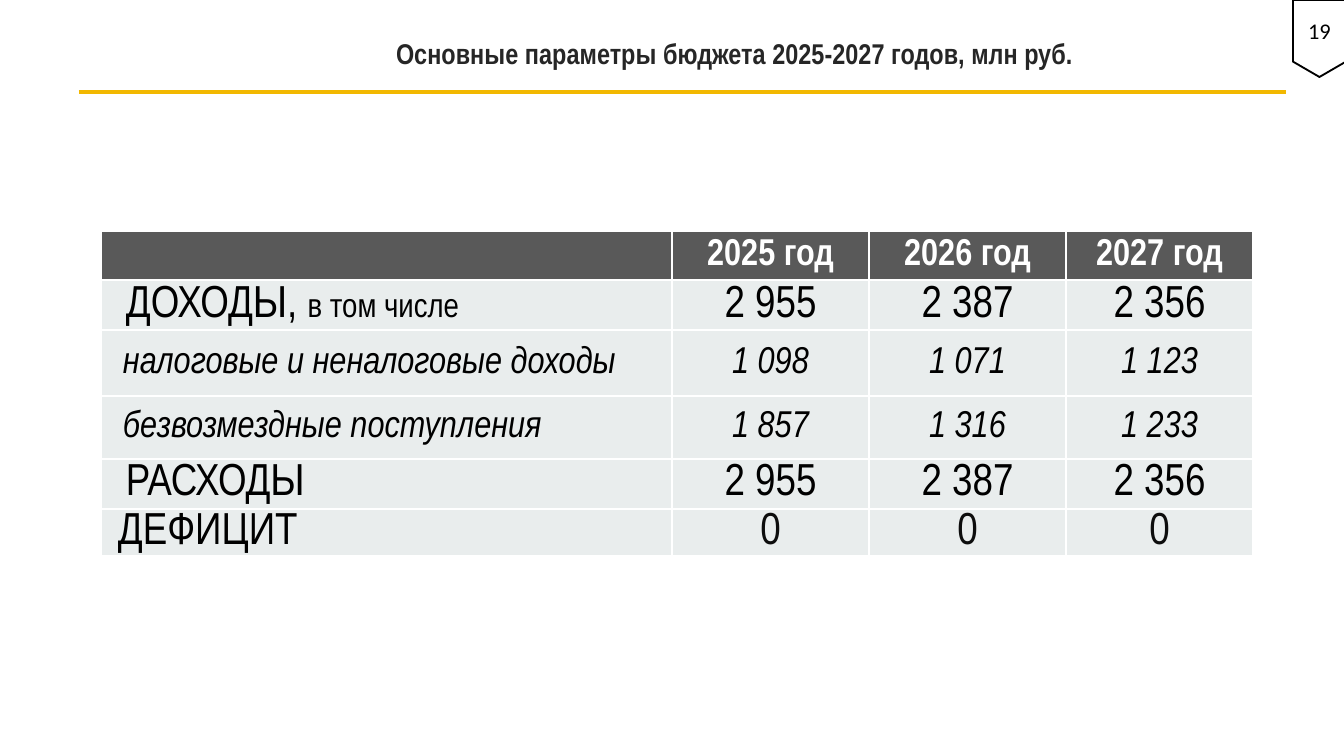
from lxml.etree import SubElement
from pptx import Presentation
from pptx.dml.color import RGBColor
from pptx.enum.shapes import MSO_CONNECTOR, MSO_SHAPE
from pptx.enum.text import MSO_ANCHOR, PP_ALIGN
from pptx.oxml.ns import qn
from pptx.util import Pt

EMU_PER_PX = 914400 / 134.4
WHITE = RGBColor(0xFF, 0xFF, 0xFF)
BLACK = RGBColor(0x00, 0x00, 0x00)
ZERO_TEXT = RGBColor(0x0D, 0x0D, 0x0D)
TITLE_TEXT = RGBColor(0x26, 0x26, 0x26)
GOLD = RGBColor(0xF2, 0xB8, 0x00)
HEADER_FILL = RGBColor(0x59, 0x59, 0x59)
BODY_FILL = RGBColor(0xE9, 0xED, 0xED)

COLUMN_WIDTHS = [571, 197, 197, 187]
HEADER_HEIGHT = 49
YEARS = ["2025 год", "2026 год", "2027 год"]
MAIN = {"size": 24}
DETAIL = {"size": 20, "italic": True}
# Row height, label indent, label runs, values, value format
BUDGET_ROWS = [
    (50, 25, [("ДОХОДЫ, ", MAIN), ("в том числе", {"size": 18})],
     ["2 955", "2 387", "2 356"], MAIN),
    (66, 22, [("налоговые и неналоговые доходы", DETAIL)],
     ["1 098", "1 071", "1 123"], DETAIL),
    (63, 22, [("безвозмездные поступления", DETAIL)],
     ["1 857", "1 316", "1 233"], DETAIL),
    (50, 25, [("РАСХОДЫ", MAIN)], ["2 955", "2 387", "2 356"], MAIN),
    (47, 17, [("ДЕФИЦИТ", MAIN)], ["0", "0", "0"], {"size": 24, "color": ZERO_TEXT}),
]


def px(length):
    return round(length * EMU_PER_PX)


def add_text(paragraph, text, size=20, font="Arial Narrow", color=BLACK,
             bold=False, italic=False, align=PP_ALIGN.LEFT):
    paragraph.alignment = align
    run = paragraph.add_run()
    run.text = text
    run.font.name = font
    run.font.size = Pt(size)
    run.font.color.rgb = color
    run.font.bold = bold
    run.font.italic = italic


def add_title(slide, left, top, width, height):
    title = slide.shapes.title
    title.left, title.top, title.width, title.height = map(px, (left, top, width, height))
    frame = title.text_frame
    frame.word_wrap = True
    frame.vertical_anchor = MSO_ANCHOR.MIDDLE
    frame.margin_left = frame.margin_right = px(10)
    frame.margin_top = frame.margin_bottom = px(5)
    paragraph = frame.paragraphs[0]
    paragraph.line_spacing = 0.9
    add_text(paragraph, "Основные параметры бюджета 2025-2027 годов, млн руб.",
             size=15.3, color=TITLE_TEXT, bold=True)


def add_rule(slide, left, top, width):
    rule = slide.shapes.add_connector(
        MSO_CONNECTOR.STRAIGHT, px(left), px(top), px(left + width), px(top))
    rule.line.color.rgb = GOLD
    rule.line.width = Pt(2.25)
    SubElement(rule._element.spPr, qn("a:effectLst"))


def format_cell(cell, fill, left_margin=1, top_margin=1):
    properties = cell._tc.get_or_add_tcPr()
    for side in ("lnL", "lnR", "lnT", "lnB"):
        border = SubElement(properties, qn(f"a:{side}"), w=str(Pt(1)))
        border_fill = SubElement(border, qn("a:solidFill"))
        SubElement(border_fill, qn("a:srgbClr"), val=str(WHITE))
    cell.fill.solid()
    cell.fill.fore_color.rgb = fill
    cell.vertical_anchor = MSO_ANCHOR.MIDDLE
    cell.margin_left, cell.margin_right = px(left_margin), px(1)
    cell.margin_top, cell.margin_bottom = px(top_margin), 0


def add_budget_table(slide, left, top):
    heights = [HEADER_HEIGHT] + [row[0] for row in BUDGET_ROWS]
    table = slide.shapes.add_table(
        len(heights), len(COLUMN_WIDTHS), px(left), px(top),
        px(sum(COLUMN_WIDTHS)), px(sum(heights))).table
    for column, width in zip(table.columns, COLUMN_WIDTHS):
        column.width = px(width)
    for row, height in zip(table.rows, heights):
        row.height = px(height)

    # Header row
    format_cell(table.cell(0, 0), HEADER_FILL)
    for column, year in enumerate(YEARS, 1):
        cell = table.cell(0, column)
        format_cell(cell, HEADER_FILL)
        add_text(cell.text_frame.paragraphs[0], year, color=WHITE, bold=True,
                 align=PP_ALIGN.CENTER)

    # Budget rows
    for row, (_, indent, label, values, style) in enumerate(BUDGET_ROWS, 1):
        cell = table.cell(row, 0)
        format_cell(cell, BODY_FILL, left_margin=indent)
        for text, label_style in label:
            add_text(cell.text_frame.paragraphs[0], text, **label_style)
        for column, value in enumerate(values, 1):
            cell = table.cell(row, column)
            format_cell(cell, BODY_FILL)
            add_text(cell.text_frame.paragraphs[0], value, align=PP_ALIGN.CENTER, **style)


def add_page_marker(slide, left, top, width, height):
    marker = slide.shapes.add_shape(
        MSO_SHAPE.FLOWCHART_OFFPAGE_CONNECTOR, px(left), px(top), px(width), px(height))
    marker.shadow.inherit = False
    marker.fill.solid()
    marker.fill.fore_color.rgb = WHITE
    marker.line.color.rgb = BLACK
    marker.line.width = Pt(1)
    frame = marker.text_frame
    frame.vertical_anchor = MSO_ANCHOR.MIDDLE
    frame.word_wrap = True
    add_text(frame.paragraphs[0], "19", size=12, font="Calibri", align=PP_ALIGN.CENTER)


def main():
    presentation = Presentation()
    presentation.slide_width, presentation.slide_height = px(1344), px(756)
    slide = presentation.slides.add_slide(presentation.slide_layouts[5])
    add_title(slide, 386, 21, 762, 69)
    add_rule(slide, 79, 92, 1207)
    add_budget_table(slide, 101, 231)
    add_page_marker(slide, 1293, 0, 53, 77)
    presentation.save("out.pptx")


if __name__ == "__main__":
    main()
